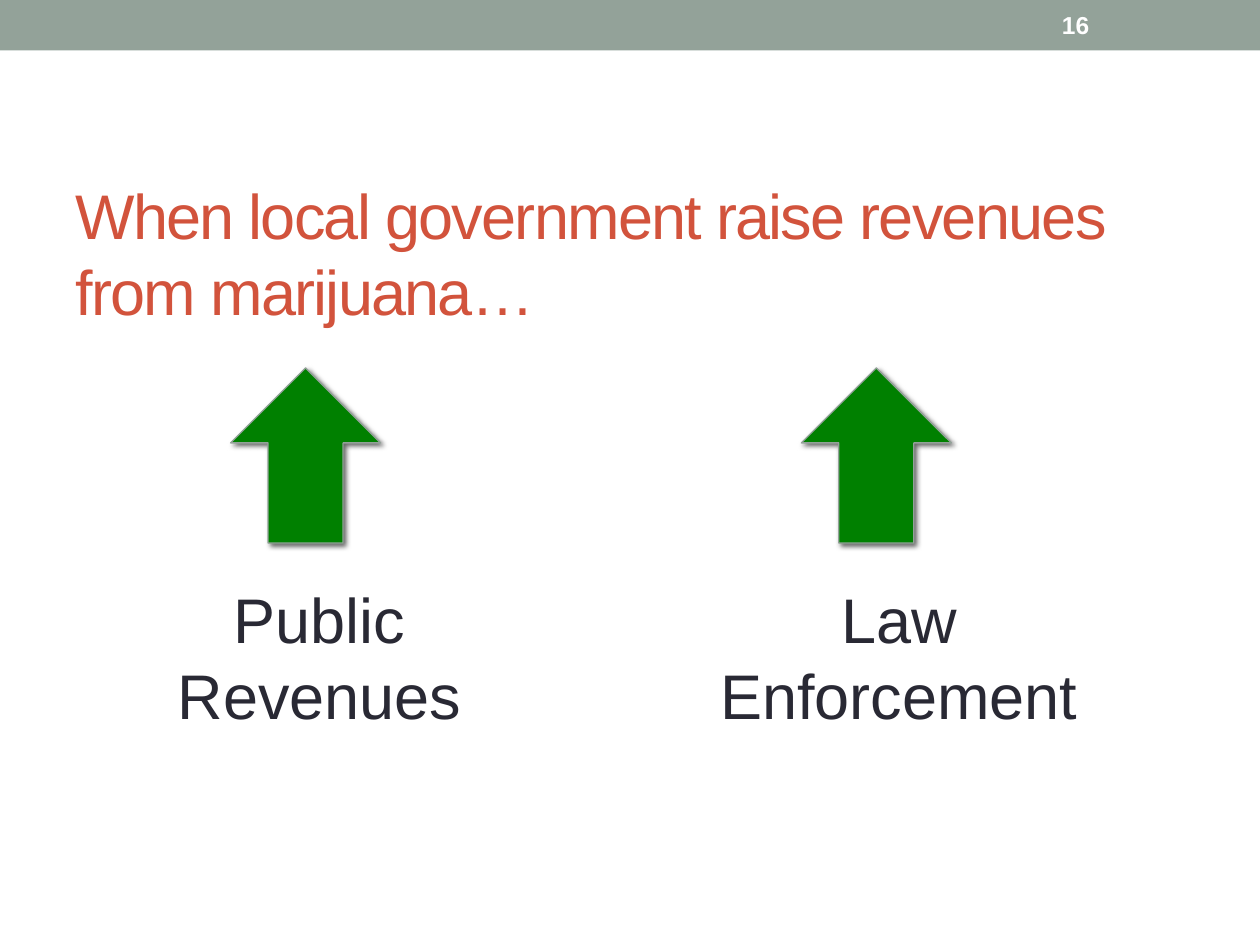
from lxml import etree
from pptx import Presentation
from pptx.dml.color import RGBColor
from pptx.enum.shapes import MSO_SHAPE
from pptx.enum.text import MSO_ANCHOR, PP_ALIGN
from pptx.oxml.ns import qn
from pptx.util import Inches, Pt

RECT, ARROW = MSO_SHAPE.RECTANGLE, MSO_SHAPE.UP_ARROW
TOP, MIDDLE = MSO_ANCHOR.TOP, MSO_ANCHOR.MIDDLE
LEFT, CENTER = PP_ALIGN.LEFT, PP_ALIGN.CENTER

SAGE = RGBColor(0x93, 0xA2, 0x99)
RUST = RGBColor(0xD2, 0x53, 0x3C)
INK = RGBColor(0x29, 0x29, 0x34)
GREEN = RGBColor(0x00, 0x80, 0x00)
WHITE = RGBColor(0xFF, 0xFF, 0xFF)

# Content
TITLE = "When local government raise revenues from marijuana…"
NUMBER = "16"
# Each effect: lines, label left, label width, arrow left
EFFECTS = [
    (["Public", "Revenues"], 1.24, 2.59, 1.83),
    (["Law", "Enforcement"], 5.57, 3.13, 6.36),
]


def add_text(slide, lines, box, size=36, color=INK, bold=False,
             align=LEFT, anchor=TOP, track=0):
    frame = slide.shapes.add_textbox(*map(Inches, box)).text_frame
    frame.word_wrap = True
    frame.vertical_anchor = anchor
    for i, line in enumerate(lines):
        para = frame.paragraphs[0] if i == 0 else frame.add_paragraph()
        para.alignment = align
        run = para.add_run()
        run.text = line
        font = run.font
        font.name, font.size, font.bold = "Arial", Pt(size), bold
        font.color.rgb = color
        if track:
            run._r.get_or_add_rPr().set("spc", str(track * 100))


def add_block(slide, kind, box, fill):
    shape = slide.shapes.add_shape(kind, *map(Inches, box))
    shape.shadow.inherit = False
    shape.fill.solid()
    shape.fill.fore_color.rgb = fill
    shape.line.fill.background()
    return shape


def add_shadow(shape):
    effects = shape._element.spPr.find(qn("a:effectLst"))
    outer = etree.SubElement(
        effects, qn("a:outerShdw"), blurRad=str(Pt(3)), dist=str(Pt(2)),
        dir=str(45 * 60000), rotWithShape="0")
    tint = etree.SubElement(outer, qn("a:srgbClr"), val="000000")
    etree.SubElement(tint, qn("a:alpha"), val="60000")


def main():
    deck = Presentation()
    deck.slide_width, deck.slide_height = Inches(10), Inches(7.5)
    slide = deck.slides.add_slide(deck.slide_layouts[6])

    # Top band and title
    add_block(slide, RECT, (0, 0, 10, 0.4), SAGE)
    add_text(slide, [TITLE], (0.5, 1.46, 9, 1.08), color=RUST,
             anchor=MIDDLE, track=-1)

    # Rising arrows with their labels
    for lines, left, width, tip in EFFECTS:
        add_text(slide, lines, (left, 4.56, width, 1.31), align=CENTER)
        arrow = add_block(slide, ARROW, (tip, 2.92, 1.19, 1.39), GREEN)
        arrow.line.color.rgb = SAGE
        arrow.line.width = Pt(0.75)
        add_shadow(arrow)

    # Slide number
    add_text(slide, [NUMBER], (8.33, 0.02, 1.17, 0.36), size=14,
             color=WHITE, bold=True, anchor=MIDDLE)
    deck.save("out.pptx")


if __name__ == "__main__":
    main()
